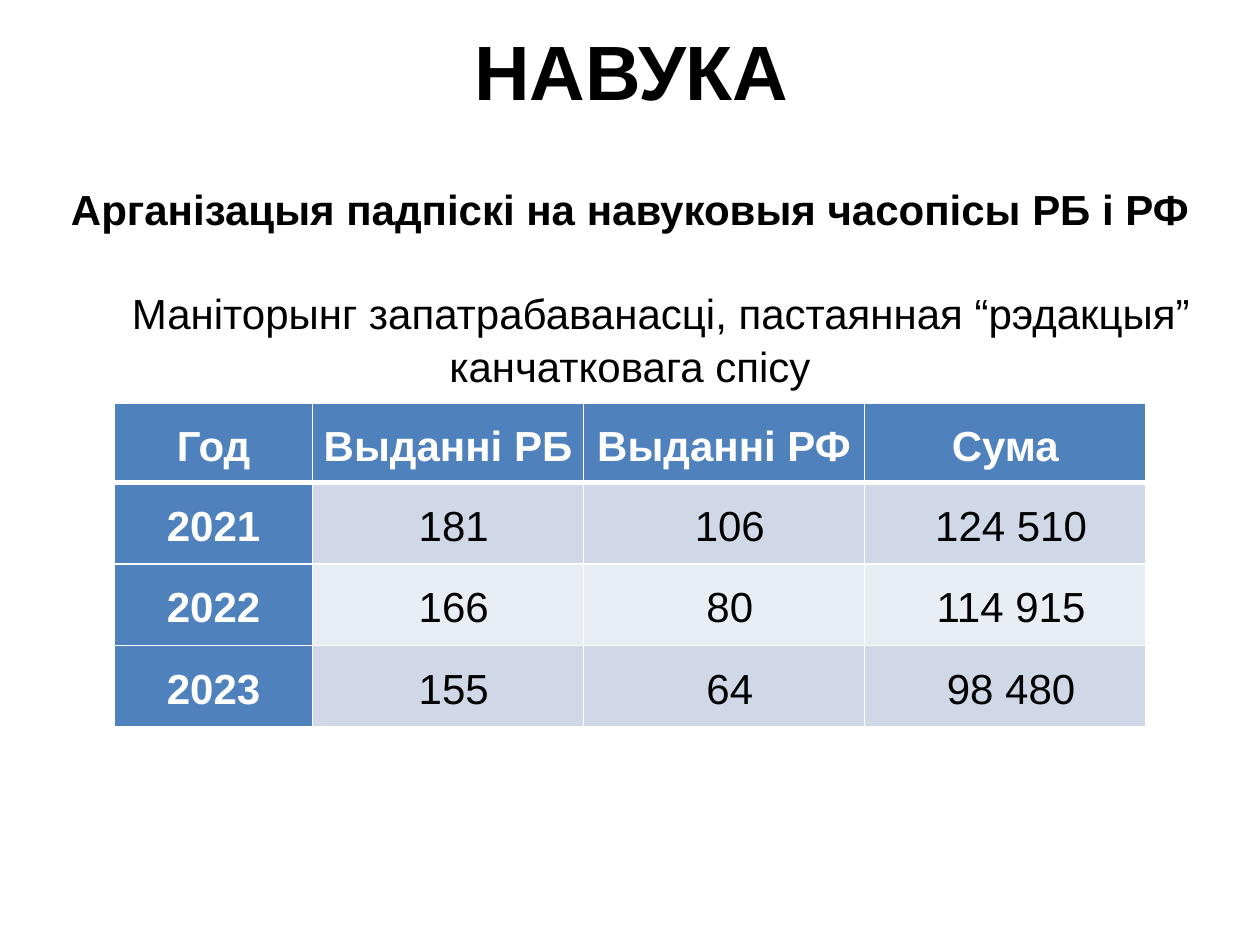
from lxml.etree import SubElement
from pptx import Presentation
from pptx.dml.color import RGBColor
from pptx.enum.text import MSO_ANCHOR, PP_ALIGN
from pptx.oxml.ns import qn
from pptx.util import Cm, Pt


def color(value):
    return RGBColor.from_string(value)


def write(para, text, size, bold, ink="000000"):
    para.text = text
    para.alignment = PP_ALIGN.CENTER
    para.font.name = "Arial"
    para.font.size = Pt(size)
    para.font.bold = bold
    para.font.color.rgb = color(ink)


deck = Presentation()
deck.slide_width, deck.slide_height = Cm(25.4), Cm(19.05)
page = deck.slides.add_slide(deck.slide_layouts[6])

# Table of subscriptions by year
rows = [
    ("Год", "Выданні РБ", "Выданні РФ", "Сума"),
    ("2021", " 181", " 106", " 124 510"),
    ("2022", " 166", " 80", " 114 915"),
    ("2023", " 155", " 64", " 98 480"),
]
widths = [3.99, 5.46, 5.67, 5.67]
heights = [1.6, 1.64, 1.64, 1.64]
table = page.shapes.add_table(
    len(rows), len(widths), Cm(2.31), Cm(8.13), Cm(sum(widths)), Cm(sum(heights))
).table
table.first_col = True
for column, width in zip(table.columns, widths):
    column.width = Cm(width)
for row, height in zip(table.rows, heights):
    row.height = Cm(height)

for i, row in enumerate(rows):
    for j, text in enumerate(row):
        cell = table.cell(i, j)
        heading = i == 0 or j == 0
        cell.vertical_anchor = MSO_ANCHOR.MIDDLE
        cell.margin_left = cell.margin_right = Cm(0.18)
        cell.margin_top = cell.margin_bottom = 0
        para = cell.text_frame.paragraphs[0]
        write(para, text, 24, heading, "FFFFFF" if heading else "000000")
        para.line_spacing = 1.15

        # White borders, thicker under the header row
        for side in ("L", "R", "T", "B"):
            thick = (i, side) in ((0, "B"), (1, "T"))
            border = SubElement(
                cell._tc.get_or_add_tcPr(), qn(f"a:ln{side}"), w=str(Pt(3 if thick else 1))
            )
            SubElement(SubElement(border, qn("a:solidFill")), qn("a:srgbClr"), val="FFFFFF")
        cell.fill.solid()
        band = "D0D8E8" if i % 2 else "E9EDF4"
        cell.fill.fore_color.rgb = color("4F81BD" if heading else band)

# Title
box = page.shapes.add_textbox(Cm(1.3), Cm(0.13), Cm(22.86), Cm(2.57))
box.text_frame.word_wrap = True
box.text_frame.vertical_anchor = MSO_ANCHOR.MIDDLE
write(box.text_frame.paragraphs[0], "НАВУКА", 44, True)

# Subtitle and explanation
box = page.shapes.add_textbox(0, Cm(3.53), Cm(25.4), Cm(4.37))
frame = box.text_frame
frame.word_wrap = True
subtitle = frame.paragraphs[0]
write(subtitle, "Арганізацыя падпіскі на навуковыя часопісы РБ і РФ", 24, True)
note = frame.add_paragraph()
write(
    note,
    "Маніторынг запатрабаванасці, пастаянная “рэдакцыя” канчатковага спісу",
    24,
    False,
)
note.space_before = Pt(29)
note._p.get_or_add_pPr().set("indent", str(Cm(1.25)))
for para in frame.paragraphs:
    para.line_spacing = 1.05

deck.save("out.pptx")
